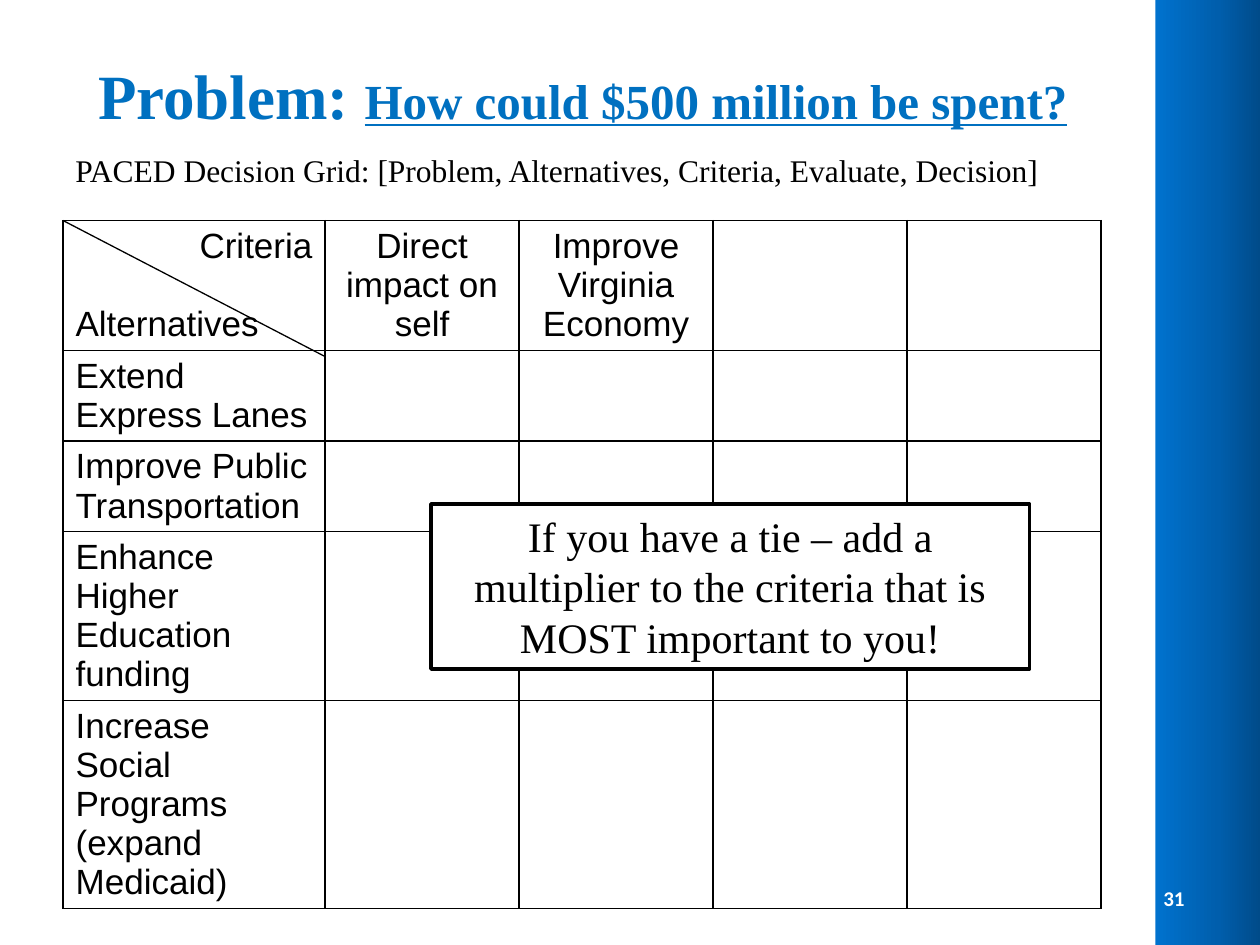
from copy import deepcopy
from dataclasses import dataclass

from pptx import Presentation
from pptx import util as u
from pptx.dml.color import RGBColor
from pptx.enum import shapes, text
from pptx.oxml import parse_xml
from pptx.oxml.ns import nsdecls, qn

COLORS = {"black": "000000", "white": "FFFFFF", "title": "0070C0",
          "strip_light": "0072CE", "strip_mid": "005EAC", "strip_dark": "004177"}
SERIF, SANS = "Times New Roman", "Arial"
AL, ANCHOR = text.PP_ALIGN, text.MSO_ANCHOR

LEFT, TOP = 0.5, 1.75
COL_WIDTHS = [2.08] + [1.54] * 4
LINE_HEIGHT = 0.31
ROW_LINES = [3, 2, 2, 4, 5]
CRITERIA = ["Direct impact on self", "Improve Virginia Economy"]
ALTERNATIVES = ["Extend Express Lanes", "Improve Public Transportation",
                "Enhance Higher Education funding",
                "Increase Social Programs (expand Medicaid)"]


@dataclass
class Run:
    text: str
    size: float
    font: str = SERIF
    color: str = "black"
    bold: bool = False
    underline: bool = False


@dataclass
class Label:
    box: tuple
    runs: list
    align: AL = AL.LEFT
    anchor: ANCHOR = ANCHOR.TOP


LABELS = [
    Label((0.5, 0.35, 8.25, 0.8),
          [Run("Problem: ", 36, color="title", bold=True),
           Run("How could $500 million be spent?", 28, color="title",
               bold=True, underline=True)],
          AL.CENTER, ANCHOR.MIDDLE),
    Label((9.08, 6.93, 0.42, 0.4), [Run("31", 12, "Calibri", "white", True)],
          AL.RIGHT, ANCHOR.MIDDLE),
    Label((0.5, 1.15, 8.58, 0.4),
          [Run("PACED Decision Grid: [Problem, Alternatives, Criteria, "
               "Evaluate, Decision]", 18)]),
]


def rgb(name: str) -> RGBColor:
    return RGBColor.from_string(COLORS[name])


def inches(*values: float) -> list:
    return [u.Inches(v) for v in values]


def write(p, runs: list, align: AL) -> None:
    p.alignment = align
    for run in runs:
        r = p.add_run()
        r.text = run.text
        formats = {"size": u.Pt(run.size), "name": run.font,
                   "bold": run.bold, "underline": run.underline}
        for key, value in formats.items():
            setattr(r.font, key, value)
        r.font.color.rgb = rgb(run.color)


def add_label(s, label: Label) -> None:
    tf = s.shapes.add_textbox(*inches(*label.box)).text_frame
    tf.word_wrap = True
    tf.vertical_anchor = label.anchor
    write(tf.paragraphs[0], label.runs, label.align)


def add_strip(s) -> None:
    sp = s.shapes.add_shape(shapes.MSO_SHAPE.RECTANGLE, *inches(9.17, 0, 1, 7.5))
    sp.shadow.inherit = False
    sp.line.fill.background()
    sp.fill.gradient()
    sp.fill.gradient_angle = 0
    first = sp.fill._fill._gradFill.find(qn("a:gsLst"))[0]
    middle = deepcopy(first)
    middle.set("pos", "50000")
    first.addnext(middle)
    for stop, name in zip(sp.fill.gradient_stops,
                          ("strip_light", "strip_mid", "strip_dark")):
        stop.color.rgb = rgb(name)


def add_borders(cell) -> None:
    """Put a thin black line on each side; must come before the fill element."""
    tc_pr = cell._tc.get_or_add_tcPr()
    for i, side in enumerate(("lnL", "lnR", "lnT", "lnB")):
        tc_pr.insert(i, parse_xml(
            f'<a:{side} {nsdecls("a")} w="12700"><a:solidFill>'
            f'<a:srgbClr val="{COLORS["black"]}"/></a:solidFill></a:{side}>'))


def add_grid(s) -> None:
    heights = [0.1 + LINE_HEIGHT * n for n in ROW_LINES]
    table = s.shapes.add_table(
        len(heights), len(COL_WIDTHS),
        *inches(LEFT, TOP, sum(COL_WIDTHS), sum(heights))).table
    table.first_row = table.horz_banding = False
    for column, width in zip(table.columns, COL_WIDTHS):
        column.width = u.Inches(width)
    for row, height in zip(table.rows, heights):
        row.height = u.Inches(height)
    for cell in table.iter_cells():
        cell.fill.background()
        add_borders(cell)

    def fill_cell(row: int, col: int, words: str, align: AL) -> None:
        write(table.cell(row, col).text_frame.paragraphs[0],
              [Run(words, 20, SANS)], align)

    fill_cell(0, 0, "Criteria", AL.RIGHT)
    p = table.cell(0, 0).text_frame.add_paragraph()
    p.space_before = u.Inches(LINE_HEIGHT)
    write(p, [Run("Alternatives", 20, SANS)], AL.LEFT)
    for col, words in enumerate(CRITERIA, 1):
        fill_cell(0, col, words, AL.CENTER)
    for row, words in enumerate(ALTERNATIVES, 1):
        fill_cell(row, 0, words, AL.LEFT)


def add_diagonal(s) -> None:
    line = s.shapes.add_connector(
        shapes.MSO_CONNECTOR.STRAIGHT,
        *inches(LEFT, TOP, LEFT + COL_WIDTHS[0], 2.83))
    line.line.color.rgb = rgb("black")
    line.line.width = u.Pt(0.75)
    line._element.spPr.append(parse_xml(f'<a:effectLst {nsdecls("a")}/>'))


def add_callout(s) -> None:
    sp = s.shapes.add_shape(shapes.MSO_SHAPE.RECTANGLE, *inches(3.42, 4, 4.75, 1.31))
    sp.shadow.inherit = False
    sp.fill.solid()
    sp.fill.fore_color.rgb = rgb("white")
    sp.line.color.rgb = rgb("black")
    sp.line.width = u.Pt(2)
    tf = sp.text_frame
    tf.word_wrap = True
    tf.vertical_anchor = ANCHOR.TOP
    write(tf.paragraphs[0],
          [Run("If you have a tie – add a multiplier to the criteria that is "
               "MOST important to you!", 24)], AL.CENTER)


def main() -> None:
    prs = Presentation()
    prs.slide_width, prs.slide_height = inches(10, 7.5)
    s = prs.slides.add_slide(prs.slide_layouts[6])
    add_strip(s)
    add_grid(s)
    for label in LABELS:
        add_label(s, label)
    add_diagonal(s)
    add_callout(s)
    prs.save("out.pptx")


if __name__ == "__main__":
    main()
